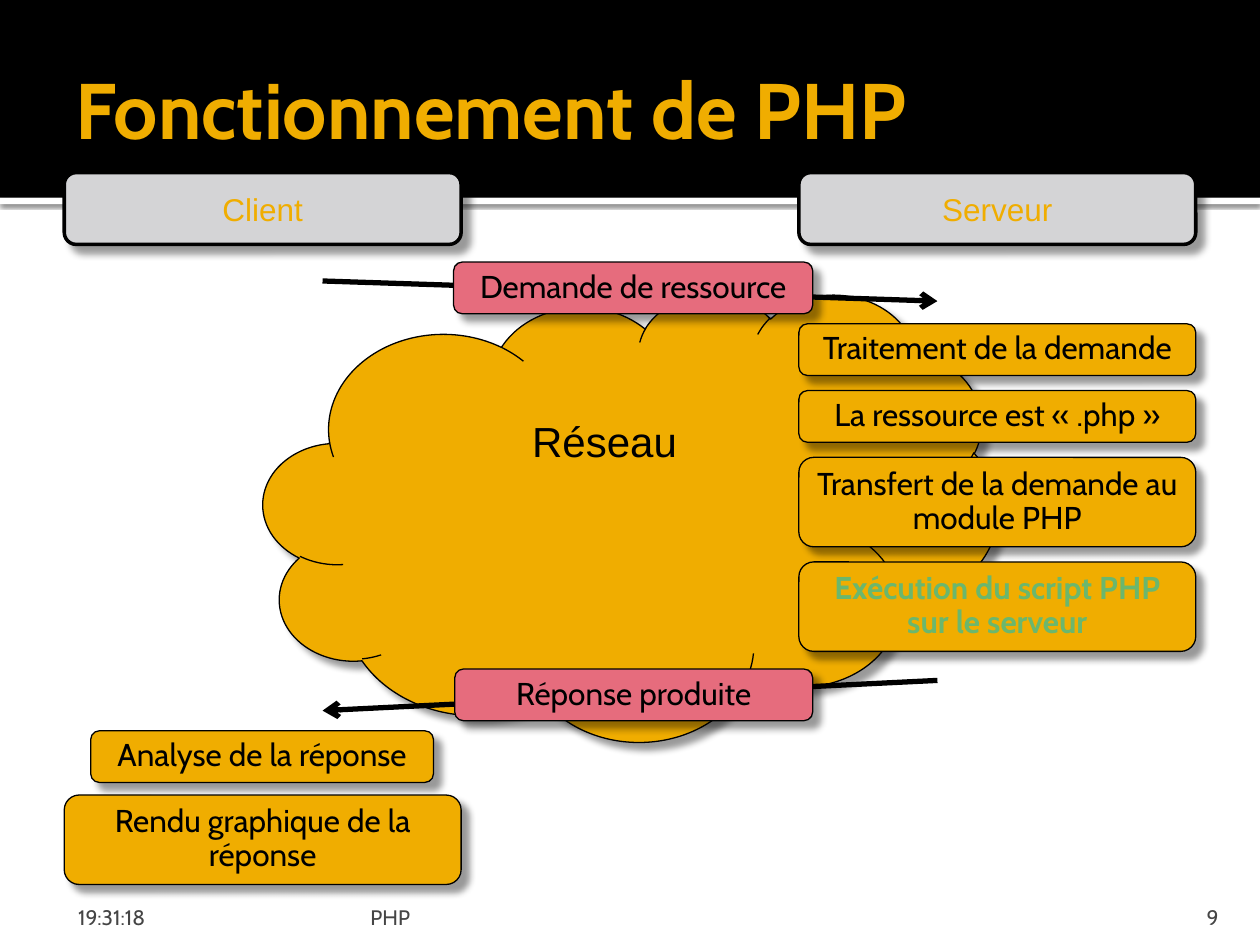
import pptx
import pptx.dml.color
import pptx.enum.dml
import pptx.enum.shapes
import pptx.enum.text
import pptx.oxml
import pptx.oxml.ns
import pptx.util
from pptx.util import Inches

SHAPE = pptx.enum.shapes.MSO_SHAPE
ALIGN = pptx.enum.text.PP_ALIGN
ANCHOR = pptx.enum.text.MSO_ANCHOR
AUTO_SIZE = pptx.enum.text.MSO_AUTO_SIZE
AMBER, BLACK, WHITE, PINK = "F0AD00", "000000", "FFFFFF", "E66C7D"
SILVER, GREEN, GREY = "D4D4D6", "6BB76D", "454545"


def color(hex_code):
    """Turn a hex string into a colour."""
    return pptx.dml.color.RGBColor.from_string(hex_code)


def write(shape, text, size=18, font="Cabin", ink=BLACK, bold=False, align=ALIGN.CENTER,
          anchor=ANCHOR.MIDDLE, insets=(0.1, 0.05, 0.1, 0.05), spacing=None, grow=False):
    """Put one formatted paragraph into a shape."""
    frame = shape.text_frame
    frame.word_wrap = True
    frame.auto_size = AUTO_SIZE.SHAPE_TO_FIT_TEXT if grow else AUTO_SIZE.NONE
    frame.vertical_anchor = anchor
    frame.margin_left, frame.margin_top, frame.margin_right, frame.margin_bottom = map(Inches, insets)
    paragraph = frame.paragraphs[0]
    paragraph.alignment = align
    paragraph.line_spacing = spacing
    run = paragraph.add_run()
    run.text = text
    run.font.size = pptx.util.Pt(size)
    run.font.name = font
    run.font.bold = bold
    run.font.color.rgb = color(ink)


def cast_shadow(shape, alpha=40, blur=4, distance=6, angle=45):
    """Give a shape a soft black outer shadow."""
    shape.shadow.inherit = False
    effects = shape._element.spPr.find(pptx.oxml.ns.qn("a:effectLst"))
    effects.append(pptx.oxml.parse_xml(
        f'<a:outerShdw {pptx.oxml.ns.nsdecls("a")} blurRad="{pptx.util.Pt(blur)}" '
        f'dist="{pptx.util.Pt(distance)}" dir="{angle * 60000}" algn="tl" rotWithShape="0">'
        f'<a:srgbClr val="{BLACK}"><a:alpha val="{alpha * 1000}"/></a:srgbClr></a:outerShdw>'))


class Diagram:
    """Hold the slide and the look of its elements."""

    def __init__(self, slide):
        """Keep the slide to draw on."""
        self.shapes = slide.shapes

    def outline(self, preset, at, fill, line=None):
        """Draw a filled preset shape with an optional black line."""
        shape = self.shapes.add_shape(preset, *map(Inches, at))
        shape.shadow.inherit = False
        shape.fill.solid()
        shape.fill.fore_color.rgb = color(fill)
        if line:
            shape.line.color.rgb = color(BLACK)
            shape.line.width = pptx.util.Pt(line)
        else:
            shape.line.fill.background()
        return shape

    def label(self, text, at, **style):
        """Write text straight on the slide."""
        write(self.shapes.add_textbox(*map(Inches, at)), text, **style)

    def box(self, text, at, fill=AMBER, line=0.75, **style):
        """Draw a rounded, shadowed box with text."""
        shape = self.outline(SHAPE.ROUNDED_RECTANGLE, at, fill, line)
        cast_shadow(shape)
        write(shape, text, **style)

    def step(self, text, at, fill=AMBER, **style):
        """Draw one step of the exchange."""
        self.box(text, at, fill, spacing=0.9, grow=True, **style)

    def stack(self, top, gap, steps):
        """Draw steps below each other with an equal gap."""
        for text, left, width, height, style in steps:
            self.step(text, (left, top, width, height), **style)
            top += height + gap

    def arrow(self, start, end):
        """Draw a black arrow."""
        connector = self.shapes.add_connector(
            pptx.enum.shapes.MSO_CONNECTOR.STRAIGHT, *map(Inches, start + end))
        connector.line.color.rgb = color(BLACK)
        connector.line.width = pptx.util.Pt(3)
        namespace = pptx.oxml.ns.nsdecls("a")
        connector.line._get_or_add_ln().append(
            pptx.oxml.parse_xml(f'<a:tailEnd {namespace} type="arrow"/>'))
        connector._element.spPr.append(pptx.oxml.parse_xml(f"<a:effectLst {namespace}/>"))


def main():
    """Build the slide and save it."""
    deck = pptx.Presentation()
    deck.slide_width, deck.slide_height = Inches(10), Inches(7.5)
    diagram = Diagram(deck.slides.add_slide(deck.slide_layouts[6]))

    stripe = diagram.outline(SHAPE.RECTANGLE, (0, 1.57, 10, 0.05), WHITE)
    cast_shadow(stripe, alpha=60, blur=2.5, distance=0.8, angle=90)
    diagram.outline(SHAPE.RECTANGLE, (0, 0, 10, 1.57), BLACK)
    diagram.label("Fonctionnement de PHP", (0.5, 0.17, 9, 1.37), size=45, ink=AMBER, bold=True,
                  align=ALIGN.LEFT, insets=(0.1, 0.05, 0.05, 0.05))

    for text, left, width, inset, align in (
            ("19:31:18", 0.5, 2.33, 0.12, ALIGN.LEFT),
            ("PHP", 2.89, 6.02, 0.05, ALIGN.LEFT),
            ("9", 8.97, 0.8, 0.1, ALIGN.RIGHT)):
        diagram.label(text, (left, 7.08, width, 0.3), size=12, ink=GREY, align=align,
                      anchor=ANCHOR.BOTTOM, insets=(inset, 0.05, 0.1, 0))

    network = diagram.outline(SHAPE.CLOUD, (2.09, 2.33, 5.83, 3.55), AMBER, 0.75)
    cast_shadow(network)
    write(network, "Réseau", size=24, font="Arial", anchor=ANCHOR.TOP,
          insets=(0.1, 0.43, 0.1, 0.05))

    client, server, column = 0.51, 6.34, 3.15
    for text, left in (("Client", client), ("Serveur", server)):
        diagram.box(text, (left, 1.37, column, 0.57), SILVER, 2, font="Arial", ink=AMBER)

    diagram.arrow((2.56, 2.23), (7.44, 2.39))
    diagram.step("Demande de ressource", (3.6, 2.08, 2.85, 0.41), PINK)
    diagram.stack(2.57, 0.12, (
        ("Traitement de la demande", server, column, 0.41, {}),
        ("La ressource est « .php »", server, column, 0.41, {}),
        ("Transfert de la demande au module PHP", server, column, 0.71, {}),
        ("Exécution du script PHP sur le serveur", server, column, 0.71,
         {"ink": GREEN, "bold": True})))

    diagram.arrow((7.44, 5.4), (2.56, 5.64))
    diagram.stack(5.8, 0.1, (
        ("Analyse de la réponse", 0.72, 2.72, 0.41, {}),
        ("Rendu graphique de la réponse", client, column, 0.71, {})))
    diagram.step("Réponse produite", (3.61, 5.31, 2.84, 0.41), PINK)

    deck.save("out.pptx")


if __name__ == "__main__":
    main()
